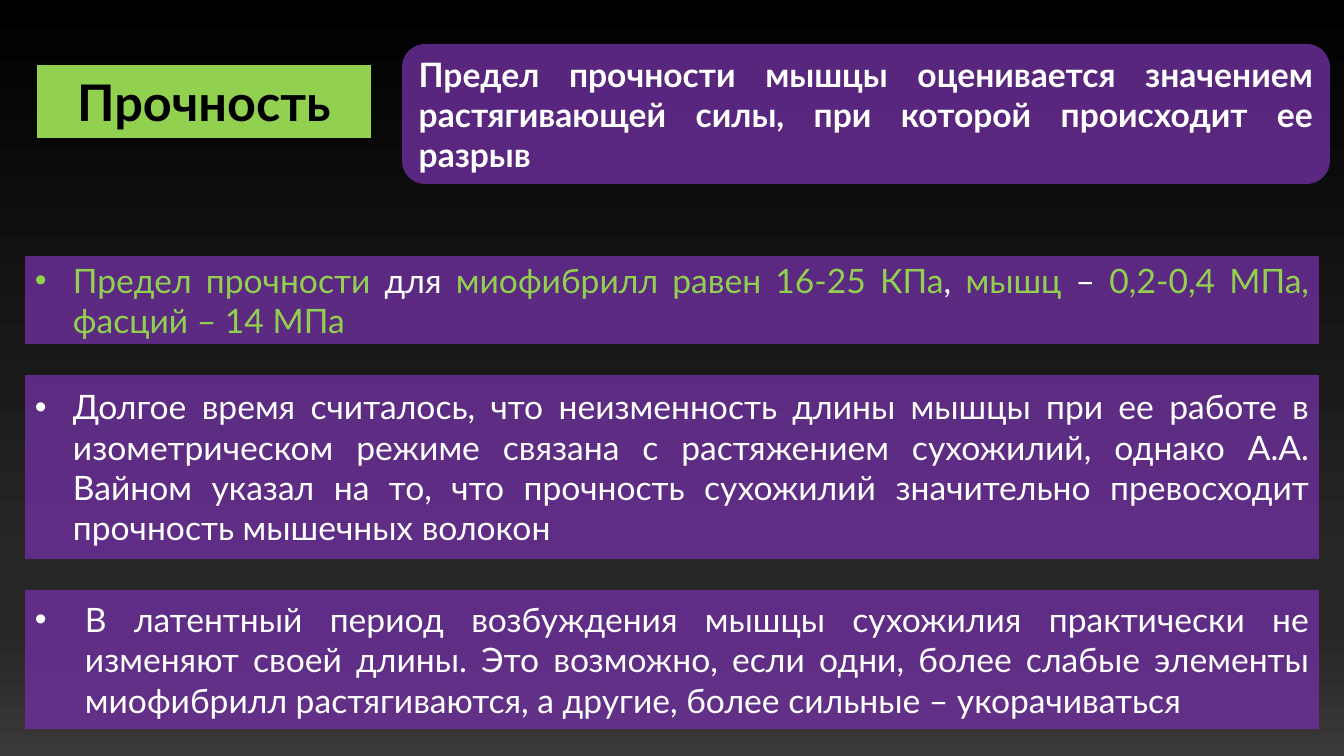
from lxml import etree
from pptx import Presentation
from pptx import util as u
from pptx.dml.color import RGBColor
from pptx.enum import shapes, text
from pptx.oxml.ns import qn

PX = 914400 / 100.8
SLIDE_SIZE = (1344, 756)
BACKGROUND_STOPS = [(0, "000000"), (74, "262626"), (83, "262626"), (100, "3B3838")]
FONT = "Lato"
GREEN, PURPLE, WHITE, BLACK = "92D050", "7030A0", "FFFFFF", "000000"
PURPLE_OPACITY = 78

TITLE = "Прочность"
TITLE_BOX = (37, 65, 334, 73)
DEFINITION = ("Предел прочности мышцы оценивается значением растягивающей силы, "
              "при которой происходит ее разрыв")
DEFINITION_BOX = (402, 44, 928, 140)

PANEL_LEFT, PANEL_TOP, PANEL_WIDTH, PANEL_GAP = 25, 256, 1294, 31
# Each panel: height, bullet indent, runs of (text, colour)
PANELS = [
    (88, 38, [
        ("Предел прочности ", GREEN), ("для ", WHITE),
        ("миофибрилл равен 16-25 КПа", GREEN), (", ", WHITE),
        ("мышц", GREEN), (" – ", WHITE),
        ("0,2-0,4 МПа, фасций – 14 МПа", GREEN)]),
    (184, 38, [
        ("Долгое время считалось, что неизменность длины мышцы при ее работе в "
         "изометрическом режиме связана с растяжением сухожилий, однако А.А. "
         "Вайном указал на то, что прочность сухожилий значительно превосходит "
         "прочность мышечных волокон", WHITE)]),
    (139, 50, [
        ("В латентный период возбуждения мышцы сухожилия практически не изменяют "
         "своей длины. Это возможно, если одни, более слабые элементы миофибрилл "
         "растягиваются, а другие, более сильные – укорачиваться", WHITE)]),
]


def emu(pixels):
    return u.Emu(round(pixels * PX))


def colour(value):
    return RGBColor.from_string(value)


def paint_background(slide):
    fill = slide.background.fill
    fill.gradient()
    fill.gradient_angle = 270
    stops = next(slide.element.iter(qn("a:gsLst")))
    for stop in list(stops):
        stops.remove(stop)
    for position, value in BACKGROUND_STOPS:
        stop = etree.SubElement(stops, qn("a:gs"), pos=str(position * 1000))
        etree.SubElement(stop, qn("a:srgbClr"), val=value)


def add_box(slide, kind, box, fill, opacity=100):
    shape = slide.shapes.add_shape(kind, *map(emu, box))
    shape.shadow.inherit = False
    shape.fill.solid()
    shape.fill.fore_color.rgb = colour(fill)
    shape.line.fill.background()
    if opacity < 100:
        fill_colour = shape.element.spPr.find(f"{qn('a:solidFill')}/{qn('a:srgbClr')}")
        etree.SubElement(fill_colour, qn("a:alpha"), val=str(opacity * 1000))
    return shape


def write(shape, runs, size=24, bold=False, align=text.PP_ALIGN.JUSTIFY, indent=0):
    """Write (text, colour) runs; a non-zero indent in px adds a hanging bullet."""
    frame = shape.text_frame
    frame.word_wrap = True
    frame.vertical_anchor = text.MSO_ANCHOR.MIDDLE
    paragraph = frame.paragraphs[0]
    paragraph.alignment = align
    for words, value in runs:
        run = paragraph.add_run()
        run.text = words
        run.font.name = FONT
        run.font.size = u.Pt(size)
        run.font.bold = bold
        run.font.color.rgb = colour(value)
    if indent:
        properties = paragraph._p.get_or_add_pPr()
        properties.set("marL", str(emu(indent)))
        properties.set("indent", str(-emu(indent)))
        etree.SubElement(properties, qn("a:buFont"), typeface="Arial")
        etree.SubElement(properties, qn("a:buChar"), char="•")


def main():
    presentation = Presentation()
    presentation.slide_width, presentation.slide_height = map(emu, SLIDE_SIZE)
    slide = presentation.slides.add_slide(presentation.slide_layouts[6])
    paint_background(slide)

    process = shapes.MSO_SHAPE.FLOWCHART_PROCESS
    rounded = shapes.MSO_SHAPE.FLOWCHART_ALTERNATE_PROCESS
    title = add_box(slide, process, TITLE_BOX, GREEN)
    write(title, [(TITLE, BLACK)], size=36, bold=True, align=text.PP_ALIGN.CENTER)
    definition = add_box(slide, rounded, DEFINITION_BOX, PURPLE, PURPLE_OPACITY)
    write(definition, [(DEFINITION, WHITE)], bold=True)

    top = PANEL_TOP
    for height, indent, runs in PANELS:
        panel = add_box(slide, process, (PANEL_LEFT, top, PANEL_WIDTH, height),
                        PURPLE, PURPLE_OPACITY)
        write(panel, runs, indent=indent)
        top += height + PANEL_GAP

    presentation.save("out.pptx")


if __name__ == "__main__":
    main()
